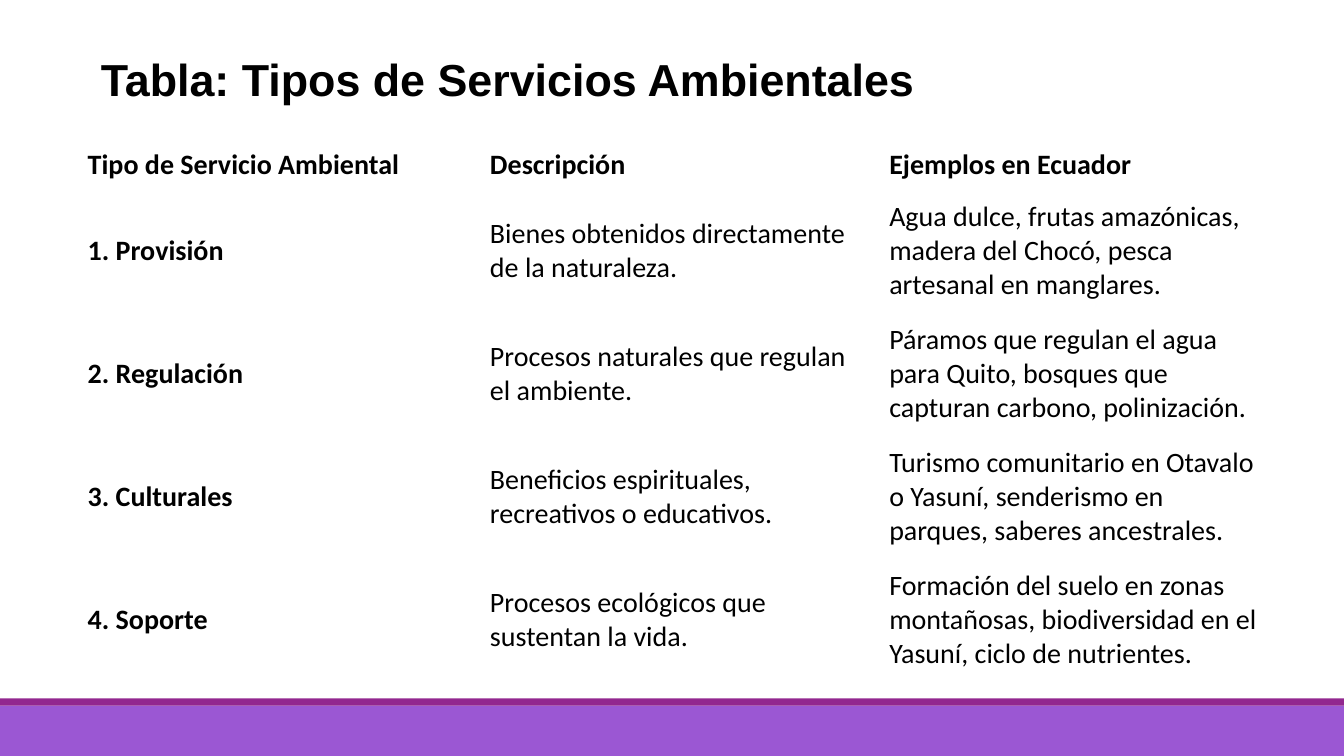
import pptx
import pptx.dml.color
import pptx.enum.shapes
import pptx.enum.text
import pptx.util

Inches = pptx.util.Inches
Pt = pptx.util.Pt
RGBColor = pptx.dml.color.RGBColor

BLACK = RGBColor(0x00, 0x00, 0x00)
VIOLET = RGBColor(0x9B, 0x57, 0xD3)
PLUM = RGBColor(0x92, 0x27, 0x8F)

TITLE = "Tabla: Tipos de Servicios Ambientales"
SERVICES = [
    ("Tipo de Servicio Ambiental", "Descripción", "Ejemplos en Ecuador"),
    ("1. Provisión",
     "Bienes obtenidos directamente de la naturaleza.",
     "Agua dulce, frutas amazónicas, madera del Chocó, pesca artesanal en manglares."),
    ("2. Regulación",
     "Procesos naturales que regulan el ambiente.",
     "Páramos que regulan el agua para Quito, bosques que capturan carbono, polinización."),
    ("3. Culturales",
     "Beneficios espirituales, recreativos o educativos.",
     "Turismo comunitario en Otavalo o Yasuní, senderismo en parques, saberes ancestrales."),
    ("4. Soporte",
     "Procesos ecológicos que sustentan la vida.",
     "Formación del suelo en zonas montañosas, biodiversidad en el Yasuní, ciclo de nutrientes."),
]

SLIDE_WIDTH, SLIDE_HEIGHT = 13.33, 7.5
FOOTER_BANDS = [(0.5, VIOLET), (0.07, PLUM)]  # heights, from the bottom up
TABLE_LEFT, TABLE_TOP = 0.77, 1.4
COLUMN_WIDTHS = [3.99, 3.96, 3.96]
ROW_HEIGHTS = [0.48] + [1.22] * (len(SERVICES) - 1)


def style_font(para, name, size, bold):
    para.font.name = name
    para.font.size = Pt(size)
    para.font.bold = bold
    para.font.color.rgb = BLACK


def add_footer(page):
    top = SLIDE_HEIGHT
    for height, colour in FOOTER_BANDS:
        top -= height
        band = page.shapes.add_shape(
            pptx.enum.shapes.MSO_SHAPE.RECTANGLE,
            0, Inches(top), Inches(SLIDE_WIDTH), Inches(height))
        band.shadow.inherit = False
        band.fill.solid()
        band.fill.fore_color.rgb = colour
        band.line.fill.background()


def add_title(page):
    title = page.shapes.title
    title.left, title.top = Inches(0.9), Inches(0.46)
    title.width, title.height = Inches(SLIDE_WIDTH - 0.9), Inches(0.64)
    title.text_frame.text = TITLE
    title.text_frame.vertical_anchor = pptx.enum.text.MSO_ANCHOR.MIDDLE
    para = title.text_frame.paragraphs[0]
    para.alignment = pptx.enum.text.PP_ALIGN.LEFT
    style_font(para, "Arial", 32, True)


def add_services_table(page):
    table = page.shapes.add_table(
        len(SERVICES), len(COLUMN_WIDTHS), Inches(TABLE_LEFT), Inches(TABLE_TOP),
        Inches(sum(COLUMN_WIDTHS)), Inches(sum(ROW_HEIGHTS))).table
    table.first_row = table.horz_banding = False
    for column, width in zip(table.columns, COLUMN_WIDTHS):
        column.width = Inches(width)
    for row, height in zip(table.rows, ROW_HEIGHTS):
        row.height = Inches(height)
    for row_index, texts in enumerate(SERVICES):
        for column_index, text in enumerate(texts):
            cell = table.cell(row_index, column_index)
            cell.text = text
            cell.fill.background()
            cell.vertical_anchor = pptx.enum.text.MSO_ANCHOR.MIDDLE
            is_heading = row_index == 0 or column_index == 0
            style_font(cell.text_frame.paragraphs[0], "Calibri", 20, is_heading)


def main():
    deck = pptx.Presentation()
    deck.slide_width = Inches(SLIDE_WIDTH)
    deck.slide_height = Inches(SLIDE_HEIGHT)
    page = deck.slides.add_slide(deck.slide_layouts.get_by_name("Title Only"))
    add_footer(page)
    add_services_table(page)
    add_title(page)
    deck.save("out.pptx")


if __name__ == "__main__":
    main()
